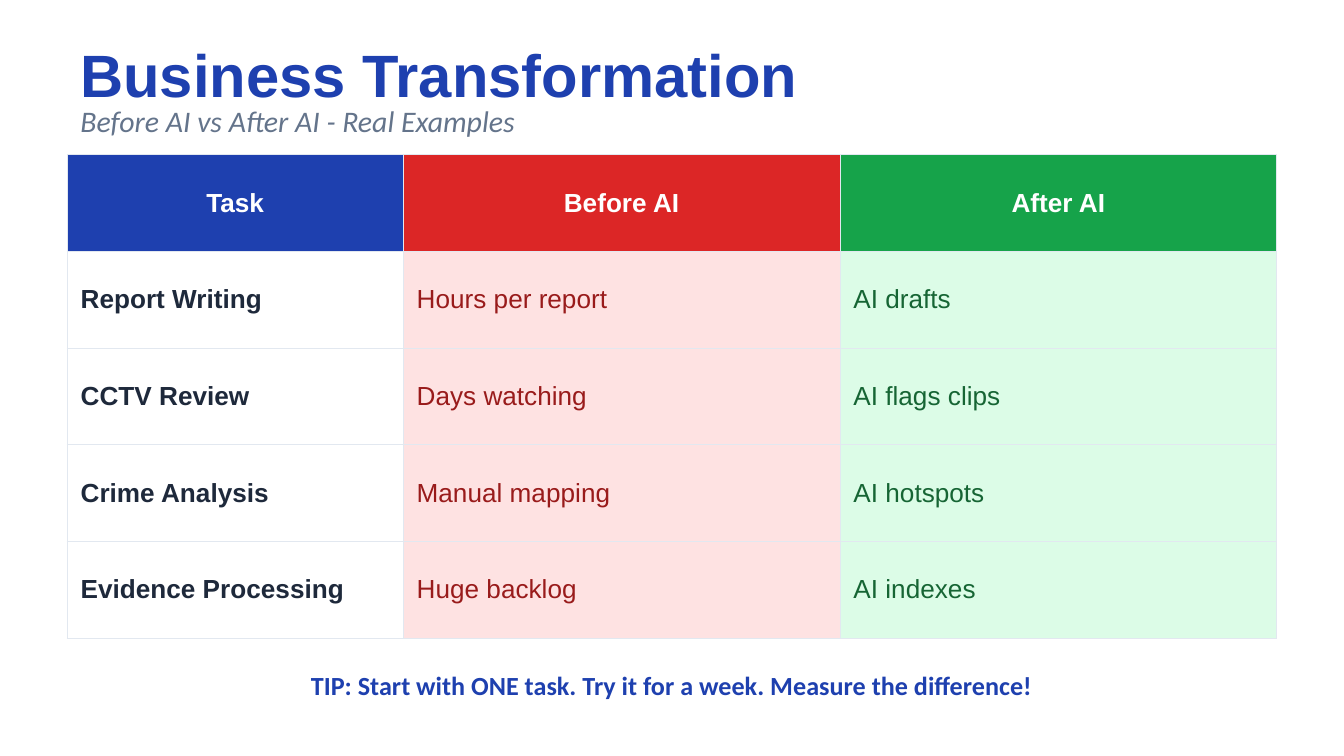
from lxml.etree import SubElement
from pptx import Presentation
from pptx.dml.color import RGBColor
from pptx.enum.text import MSO_ANCHOR as Anchor, PP_ALIGN as Align
from pptx.oxml.ns import qn
from pptx.util import Pt

PX = 4572
BLUE = "1E40AF"


def color(value):
    return RGBColor.from_string(value)


def write(paragraph, text, align, ink, formats):
    paragraph.alignment = align
    run = paragraph.add_run()
    run.text = text
    run.font.color.rgb = color(ink)
    for name, value in formats.items():
        setattr(run.font, name, value)


presentation = Presentation()
presentation.slide_width = 2000 * PX
presentation.slide_height = 1125 * PX
slide = presentation.slides.add_slide(presentation.slide_layouts[6])

texts = [
    ("Business Transformation", 60, 100, Align.LEFT, BLUE,
     {"name": "Arial", "size": Pt(32), "bold": True}),
    ("Before AI vs After AI - Real Examples", 150, 60, Align.LEFT, "64748B",
     {"name": "Calibri", "size": Pt(16), "italic": True}),
    ("TIP: Start with ONE task. Try it for a week. Measure the difference!",
     980, 80, Align.CENTER, BLUE,
     {"name": "Calibri", "size": Pt(14), "bold": True}),
]
for text, top, height, align, ink, formats in texts:
    box = slide.shapes.add_textbox(100 * PX, top * PX, 1800 * PX, height * PX)
    frame = box.text_frame
    frame.word_wrap = True
    frame.vertical_anchor = Anchor.MIDDLE
    write(frame.paragraphs[0], text, align, ink, formats)

rows = [
    ("Task", "Before AI", "After AI"),
    ("Report Writing", "Hours per report", "AI drafts"),
    ("CCTV Review", "Days watching", "AI flags clips"),
    ("Crime Analysis", "Manual mapping", "AI hotspots"),
    ("Evidence Processing", "Huge backlog", "AI indexes"),
]
columns = [
    {"width": 500, "header": BLUE, "fill": None, "ink": "1E293B"},
    {"width": 650, "header": "DC2626", "fill": "FEE2E2", "ink": "991B1B"},
    {"width": 650, "header": "16A34A", "fill": "DCFCE7", "ink": "166534"},
]
table = slide.shapes.add_table(
    len(rows), len(columns), 100 * PX, 230 * PX, 1800 * PX, 720 * PX).table
table.first_row = False
table.horz_banding = False

for column_index, column in enumerate(columns):
    table.columns[column_index].width = column["width"] * PX
    for row_index, row in enumerate(rows):
        is_header = row_index == 0
        cell = table.cell(row_index, column_index)
        cell.vertical_anchor = Anchor.MIDDLE
        properties = cell._tc.get_or_add_tcPr()
        for side in ("a:lnL", "a:lnR", "a:lnT", "a:lnB"):
            line = SubElement(properties, qn(side), w=str(Pt(0.5)))
            solid = SubElement(line, qn("a:solidFill"))
            SubElement(solid, qn("a:srgbClr"), val="E2E8F0")
        fill = column["header"] if is_header else column["fill"]
        if fill:
            cell.fill.solid()
            cell.fill.fore_color.rgb = color(fill)
        else:
            cell.fill.background()
        write(cell.text_frame.paragraphs[0], row[column_index],
              Align.CENTER if is_header else Align.LEFT,
              "FFFFFF" if is_header else column["ink"],
              {"name": "Arial", "size": Pt(14),
               "bold": is_header or column_index == 0})

presentation.save("out.pptx")
